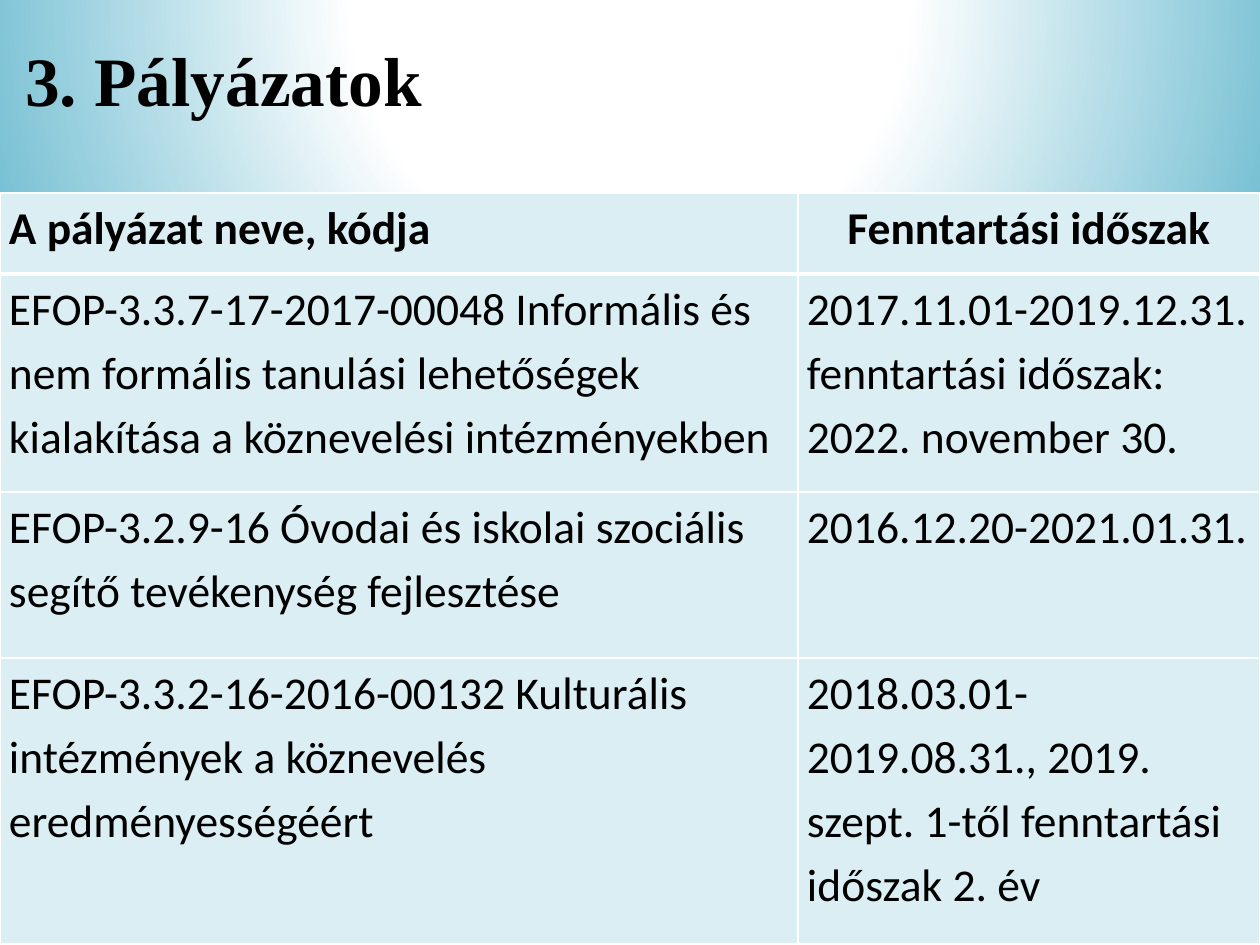
import pptx
import pptx.util
import pptx.oxml
import pptx.oxml.ns
import pptx.dml.color
import pptx.enum.text

ALIGN = pptx.enum.text.PP_ALIGN
LEFT, MID, JUST = ALIGN.LEFT, ALIGN.CENTER, ALIGN.JUSTIFY
WHITE, BLACK, TEAL, PALE = "FFFFFF", "000000", "4BACC6", "DBEEF4"
WIDTHS = [798, 462]
HEIGHTS = [81, 218, 166, 286]
ROWS = [
    [[("A pályázat neve, kódja", LEFT)], [("Fenntartási időszak", MID)]],
    [[("EFOP-3.3.7-17-2017-00048 Informális és nem formális tanulási "
       "lehetőségek kialakítása a köznevelési intézményekben", LEFT)],
     [("2017.11.01-2019.12.31.", JUST),
      ("fenntartási időszak: 2022. november 30.", LEFT)]],
    [[("EFOP-3.2.9-16 Óvodai és iskolai szociális segítő tevékenység "
       "fejlesztése", LEFT)],
     [("2016.12.20-2021.01.31.", JUST)]],
    [[("EFOP-3.3.2-16-2016-00132 Kulturális intézmények a köznevelés "
       "eredményességéért", LEFT)],
     [("2018.03.01-2019.08.31., 2019. szept. 1-től fenntartási "
       "időszak 2. év", LEFT)]],
]


def px(count):
    return pptx.util.Emu(round(count * 914400 / 126))


def tint(code):
    return pptx.dml.color.RGBColor.from_string(code)


def make(xml):
    space = pptx.oxml.ns.nsdecls("a")
    return pptx.oxml.parse_xml(xml.replace(">", f" {space}>", 1))


def write(para, text, face, size, bold):
    run = para.add_run()
    run.text = text
    run.font.name = face
    run.font.size = pptx.util.Pt(size)
    run.font.bold = bold
    run.font.color.rgb = tint(BLACK)


def paint(slide):
    slide.background.fill.gradient()
    grad = slide.element.find(".//" + pptx.oxml.ns.qn("a:gradFill"))
    for part in list(grad):
        grad.remove(part)
    stops = "".join(
        f'<a:gs pos="{spot * 1000}"><a:srgbClr val="{code}"/></a:gs>'
        for spot, code in [(0, WHITE), (35, WHITE), (100, TEAL)])
    grad.append(make(f"<a:gsLst>{stops}</a:gsLst>"))
    grad.append(make('<a:path path="circle"><a:fillToRect l="50000" '
                     't="-80000" r="50000" b="180000"/></a:path>'))


def title(slide, left, top, width, height):
    box = slide.shapes.add_textbox(px(left), px(top), px(width), px(height))
    frame = box.text_frame
    frame.word_wrap = True
    frame.margin_top = frame.margin_bottom = 0
    write(frame.paragraphs[0], "3. Pályázatok", "Times New Roman", 39.6, True)


def edge(cell, side, points):
    cell._tc.get_or_add_tcPr().append(make(
        f'<a:ln{side} w="{points * 12700}"><a:solidFill>'
        f'<a:srgbClr val="{WHITE}"/></a:solidFill></a:ln{side}>'))


def fill(cell, paras, row):
    cell.margin_left = cell.margin_right = px(9)
    cell.margin_top = cell.margin_bottom = 0
    for side in "LRTB":
        thick = (row, side) in [(0, "B"), (1, "T")]
        edge(cell, side, 3 if thick else 1)
    cell.fill.solid()
    cell.fill.fore_color.rgb = tint(PALE)
    frame = cell.text_frame
    for spot, (text, align) in enumerate(paras):
        para = frame.add_paragraph() if spot else frame.paragraphs[0]
        para.alignment = align
        para.line_spacing = 1.15
        write(para, text, "Calibri", 26, row == 0)


def grid(slide, left, top):
    table = slide.shapes.add_table(
        len(ROWS), len(WIDTHS), px(left), px(top),
        px(sum(WIDTHS)), px(sum(HEIGHTS))).table
    table.horz_banding = False
    for col, width in zip(table.columns, WIDTHS):
        col.width = px(width)
    for row, height in zip(table.rows, HEIGHTS):
        row.height = px(height)
    for row, cells in enumerate(ROWS):
        for col, paras in enumerate(cells):
            fill(table.cell(row, col), paras, row)


def main():
    deck = pptx.Presentation()
    deck.slide_width, deck.slide_height = px(1260), px(945)
    slide = deck.slides.add_slide(deck.slide_layouts[6])
    paint(slide)
    title(slide, 13, 37, 1134, 157)
    grid(slide, 0, 193)
    deck.save("out.pptx")


if __name__ == "__main__":
    main()
